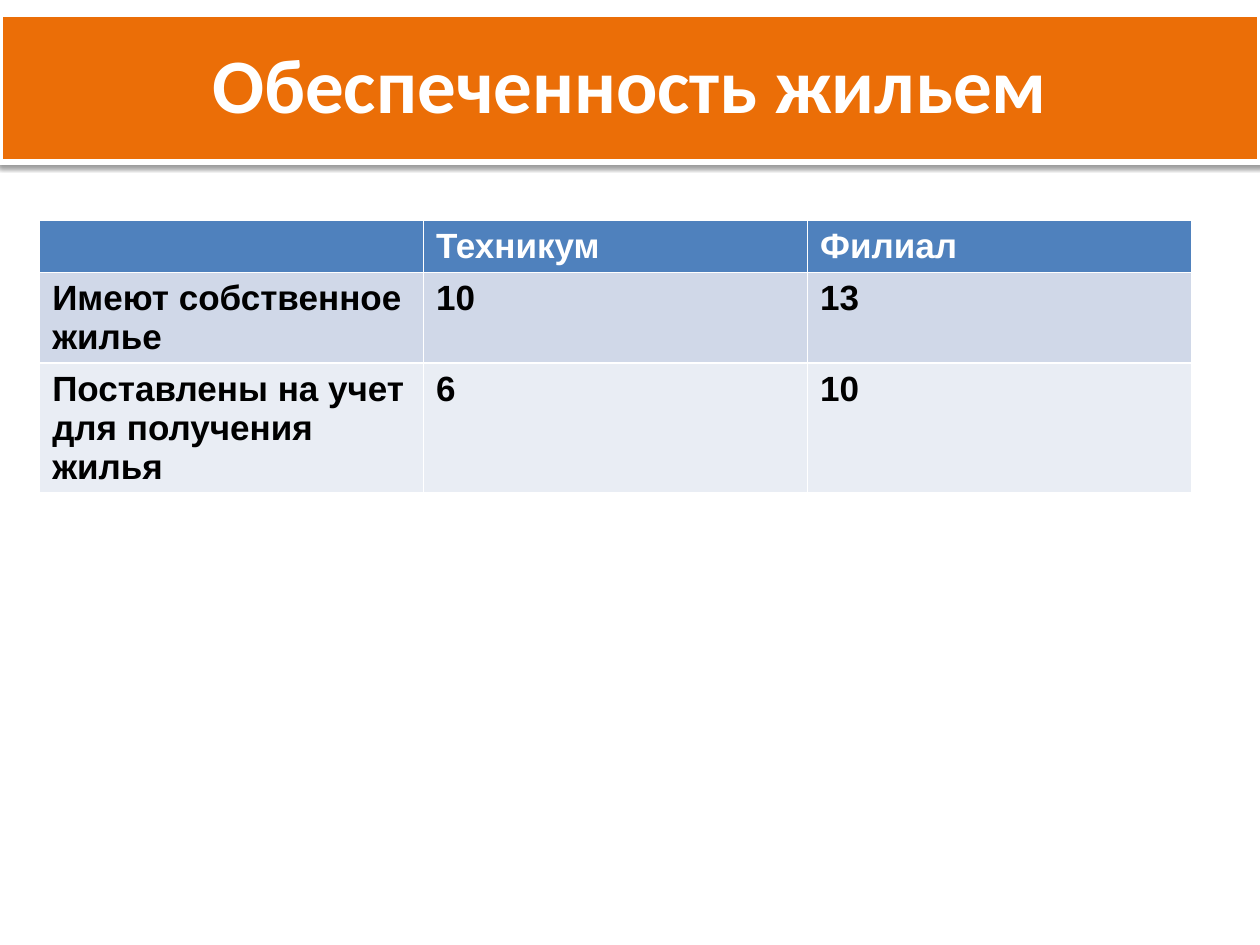
import pptx
import pptx.util
import pptx.dml.color
import pptx.enum.shapes
import pptx.enum.text
import lxml.etree
import pptx.oxml.ns

Cm = pptx.util.Cm
Pt = pptx.util.Pt
COLORS = {
    "orange": "EB6E07",
    "white": "FFFFFF",
    "black": "000000",
    "header": "4F81BD",
    "odd": "D0D8E8",
    "even": "E9EDF4",
}
ROWS = [
    ["", "Техникум", "Филиал"],
    ["Имеют собственное жилье", "10", "13"],
    ["Поставлены на учет для получения жилья", "6", "10"],
]
ROW_STYLES = [("header", "white"), ("odd", "black"), ("even", "black")]


def rgb(name):
    return pptx.dml.color.RGBColor.from_string(COLORS[name])


def format_font(font, name, size, color):
    font.name = name
    font.size = Pt(size)
    font.bold = True
    font.color.rgb = rgb(color)


prs = pptx.Presentation()
prs.slide_width = Cm(25.4)
prs.slide_height = Cm(19.05)
slide = prs.slides.add_slide(prs.slide_layouts[5])

band = slide.shapes.add_shape(
    pptx.enum.shapes.MSO_SHAPE.RECTANGLE, Cm(0), Cm(0.3), prs.slide_width, Cm(2.97)
)
band.fill.solid()
band.fill.fore_color.rgb = rgb("orange")
band.line.color.rgb = rgb("white")
band.line.width = Pt(3)
band.shadow.inherit = False
qn = pptx.oxml.ns.qn
effects = band.element.spPr.find(qn("a:effectLst"))
shadow = lxml.etree.SubElement(
    effects, qn("a:outerShdw"), blurRad=str(Pt(3.1)), dist=str(Pt(1.6)),
    dir="5400000", rotWithShape="0",
)
shadow_color = lxml.etree.SubElement(shadow, qn("a:srgbClr"), val=COLORS["black"])
lxml.etree.SubElement(shadow_color, qn("a:alpha"), val="38000")

title = slide.shapes.title
title.left, title.top = Cm(0), Cm(0.15)
title.width, title.height = prs.slide_width, Cm(3.05)
band.element.addnext(title.element)
tf = title.text_frame
tf.text = "Обеспеченность жильем"
tf.vertical_anchor = pptx.enum.text.MSO_ANCHOR.MIDDLE
p = tf.paragraphs[0]
p.alignment = pptx.enum.text.PP_ALIGN.CENTER
format_font(p.runs[0].font, "Calibri", 44, "white")

table = slide.shapes.add_table(
    len(ROWS), len(ROWS[0]), Cm(0.8), Cm(4.45), Cm(23.22), Cm(3.12)
).table
for col in table.columns:
    col.width = Cm(7.74)
for row, texts, (fill, color) in zip(table.rows, ROWS, ROW_STYLES):
    row.height = Cm(1.04)
    for cell, text in zip(row.cells, texts):
        cell.fill.solid()
        cell.fill.fore_color.rgb = rgb(fill)
        cell.text_frame.text = text
        for r in cell.text_frame.paragraphs[0].runs:
            format_font(r.font, "Arial", 20, color)

prs.save("out.pptx")
